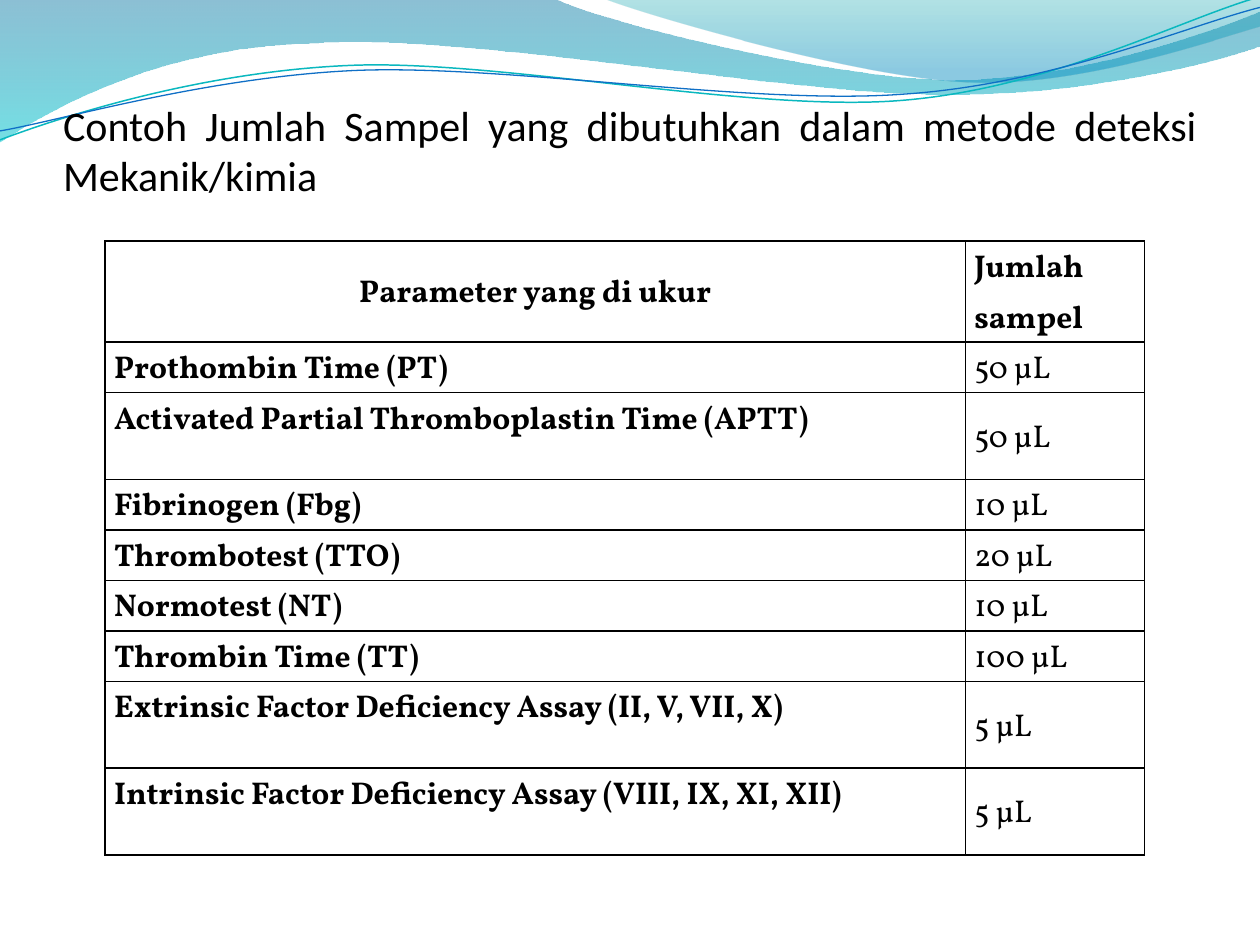
from math import cos, radians, sin

from lxml.etree import SubElement
from pptx import Presentation
from pptx.dml.color import RGBColor
from pptx.enum.text import MSO_ANCHOR as Anchor, MSO_AUTO_SIZE as AutoSize, PP_ALIGN as Align
from pptx.oxml.ns import qn
from pptx.util import Cm, Pt

COLORS = {
    "ink": "000000",
    "deep": "0074A1",
    "aqua": "00C6CF",
    "teal": "00A1A9",
    "sky": "008BBF",
    "teal_line": "0AB8BF",
    "blue_line": "0F6FC6",
}

TITLE = "Contoh Jumlah Sampel yang dibutuhkan dalam metode deteksi Mekanik/kimia"
HEADERS = ("Parameter yang di ukur", "Jumlah sampel")
SAMPLES = [
    ("Prothombin Time (PT)", "50 µL", False),
    ("Activated Partial Thromboplastin Time (APTT)", "50 µL", True),
    ("Fibrinogen (Fbg)", "10 µL", False),
    ("Thrombotest (TTO)", "20 µL", False),
    ("Normotest (NT)", "10 µL", False),
    ("Thrombin Time (TT)", "100 µL", False),
    ("Extrinsic Factor Deficiency Assay (II, V, VII, X)", "5 µL", True),
    ("Intrinsic Factor Deficiency Assay (VIII, IX, XI, XII)", "5 µL", True),
]
TALL, SHORT = Cm(1.75), Cm(0.84)
CURVE_TILT = -2.7

LEFT_WAVE = [
    (0, 0), (11.18, -0.03),
    (12.09, 0.43, 16.87, 1.6, 19.25, 1.6),
    (21.67, 1.6, 24.33, 0.66, 25.4, 0.23),
    (25.43, 0.91),
    (24.97, 1.12, 22.1, 1.93, 18.95, 1.9),
    (15.8, 1.9, 9.7, 0.71, 6.53, 0.86),
    (3.28, 0.91, 1.17, 2.11, -0.03, 2.87),
    (0, 0),
]
RIGHT_WAVE = [
    (12.17, -0.03),
    (12.93, 0.28, 17.32, 1.57, 19.53, 1.65),
    (21.74, 1.75, 24.41, 0.81, 25.4, 0.53),
    (25.4, 0),
    (12.17, -0.03),
]
TEAL_CURVE = [
    (0, 2.82),
    (1.22, 2.36, 4.01, 1.45, 7.04, 1.32),
    (10.03, 1.19, 15.06, 2.26, 18.11, 2.03),
    (21.16, 1.8, 23.83, 0.38, 25.35, -0.05),
]
BLUE_CURVE = [
    (0, 2.64),
    (1.19, 2.44, 4.17, 1.55, 7.19, 1.42),
    (10.24, 1.3, 15.16, 2.13, 18.21, 1.9),
    (21.23, 1.7, 23.9, 0.53, 25.4, 0.15),
]


def rgb(name):
    return RGBColor.from_string(COLORS[name])


def turn(point, degrees):
    x, y = point
    angle = radians(degrees)
    return x * cos(angle) - y * sin(angle), x * sin(angle) + y * cos(angle)


def level(points, tilt):
    flat = [turn(point, -tilt) for point in points]
    middle = [(min(values) + max(values)) / 2 for values in zip(*flat)]
    shift = [new - old for new, old in zip(turn(middle, tilt), middle)]
    return [(x + shift[0], y + shift[1]) for x, y in flat]


def bend(outline, segments):
    lines = iter(list(outline.element.iter(qn("a:lnTo"))))
    for segment in segments[1:]:
        first = next(lines)
        if len(segment) == 6:
            first.tag = qn("a:cubicBezTo")
            for line in (next(lines), next(lines)):
                first.append(line[0])
                line.getparent().remove(line)


def add_outline(slide, segments, close=False, tilt=0):
    points = [segment[i:i + 2] for segment in segments for i in range(0, len(segment), 2)]
    start, *rest = [(Cm(x), Cm(y)) for x, y in level(points, tilt)]
    builder = slide.shapes.build_freeform(*start)
    builder.add_line_segments(rest, close=close)
    outline = builder.convert_to_shape()
    bend(outline, segments)
    outline.rotation = tilt
    outline.shadow.inherit = False
    return outline


def add_wave(slide, segments, stops):
    wave = add_outline(slide, segments, close=True)
    wave.line.fill.background()
    wave.fill.gradient()
    wave.fill.gradient_angle = 270
    for stop, (position, color, _) in zip(wave.fill.gradient_stops, stops):
        stop.position = position
        stop.color.rgb = rgb(color)
    tints = wave.element.spPr.iter(qn("a:srgbClr"))
    for tint, (_, _, opacity) in zip(list(tints), stops):
        SubElement(tint, qn("a:alpha"), val=str(opacity * 1000))


def add_curve(slide, segments, color, width):
    curve = add_outline(slide, segments, tilt=CURVE_TILT)
    curve.fill.background()
    curve.line.color.rgb = rgb(color)
    curve.line.width = Pt(width)


def write(frame, text, font="Vollkorn", size=18, bold=False, align=Align.JUSTIFY,
          spacing=1.15, after=6):
    paragraph = frame.paragraphs[0]
    paragraph.alignment = align
    paragraph.line_spacing = spacing
    paragraph.space_after = Pt(after)
    run = paragraph.add_run()
    run.text = text
    run.font.name = font
    run.font.size = Pt(size)
    run.font.bold = bold
    run.font.color.rgb = rgb("ink")


def place_title(slide):
    title = slide.shapes.title
    slide.shapes.element.append(title.element)
    title.left, title.top, title.width, title.height = Cm(1.27), Cm(0.85), Cm(22.86), Cm(3.18)
    frame = title.text_frame
    frame.word_wrap = True
    frame.auto_size = AutoSize.NONE
    frame.vertical_anchor = Anchor.BOTTOM
    frame.margin_left = frame.margin_right = frame.margin_bottom = 0
    frame.margin_top = Cm(0.13)
    write(frame, TITLE, font="Calibri", size=24, spacing=1.0, after=0)


def fill_cell(cell, text, anchor=Anchor.MIDDLE, **text_format):
    cell.margin_left = cell.margin_right = Cm(0.18)
    cell.margin_top = cell.margin_bottom = 0
    cell.vertical_anchor = anchor
    properties = cell._tc.get_or_add_tcPr()
    for side in ("lnL", "lnR", "lnT", "lnB"):
        border = SubElement(properties, qn(f"a:{side}"), w=str(Pt(1)))
        solid = SubElement(border, qn("a:solidFill"))
        SubElement(solid, qn("a:srgbClr"), val=COLORS["ink"])
    cell.fill.background()
    write(cell.text_frame, text, **text_format)


def add_sample_table(slide):
    heights = [TALL] + [TALL if tall else SHORT for *_, tall in SAMPLES]
    widths = (Cm(17.34), Cm(3.61))
    table = slide.shapes.add_table(len(heights), len(widths), Cm(2.12), Cm(4.86),
                                   sum(widths), sum(heights)).table
    table.first_row = table.horz_banding = False
    for column, width in zip(table.columns, widths):
        column.width = width
    for row, height in zip(table.rows, heights):
        row.height = height
    fill_cell(table.cell(0, 0), HEADERS[0], bold=True, align=Align.CENTER)
    fill_cell(table.cell(0, 1), HEADERS[1], bold=True)
    for number, (parameter, volume, _) in enumerate(SAMPLES, 1):
        fill_cell(table.cell(number, 0), parameter, anchor=Anchor.TOP, bold=True)
        fill_cell(table.cell(number, 1), volume)


def main():
    deck = Presentation()
    deck.slide_width, deck.slide_height = Cm(25.4), Cm(19.05)
    slide = deck.slides.add_slide(deck.slide_layouts[5])
    add_wave(slide, LEFT_WAVE, [(0, "deep", 45), (1, "aqua", 55)])
    add_wave(slide, RIGHT_WAVE, [(0, "teal", 30), (0.8, "sky", 45)])
    add_curve(slide, TEAL_CURVE, "teal_line", 0.85)
    add_curve(slide, BLUE_CURVE, "blue_line", 0.75)
    place_title(slide)
    add_sample_table(slide)
    deck.save("out.pptx")


if __name__ == "__main__":
    main()
